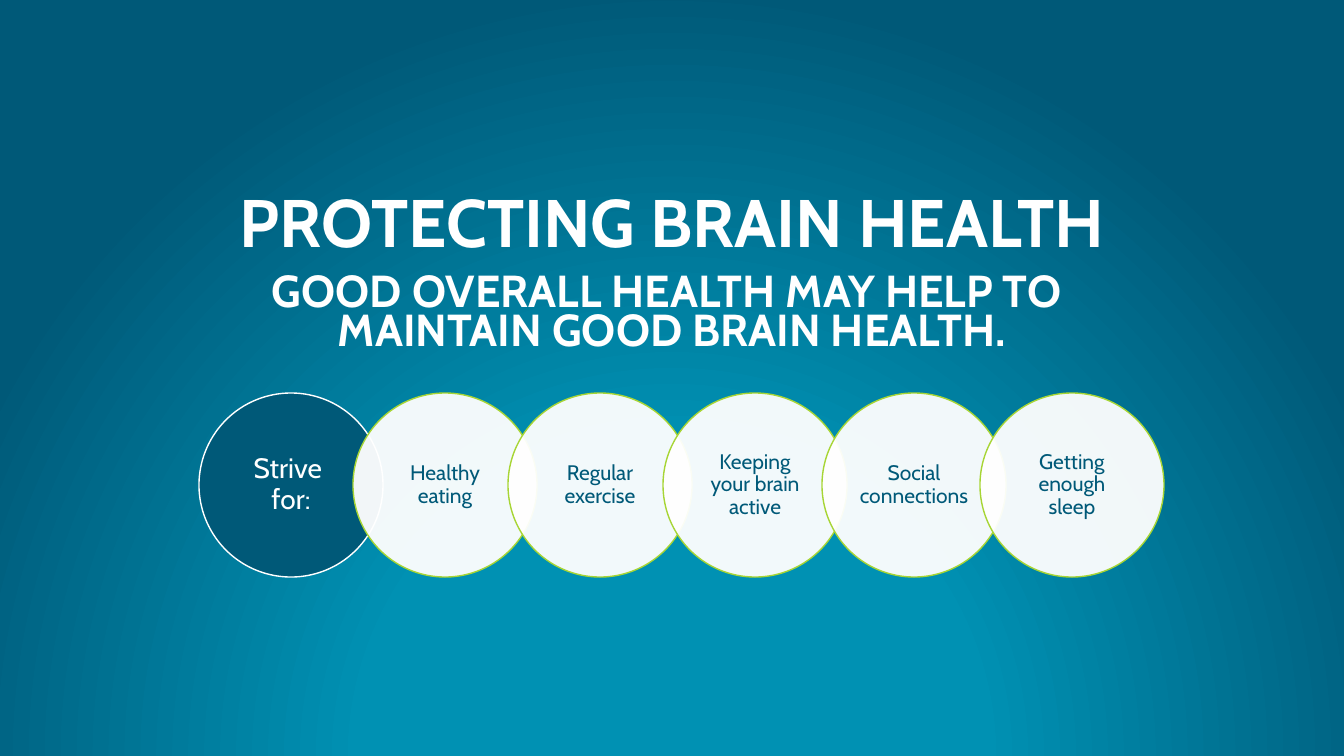
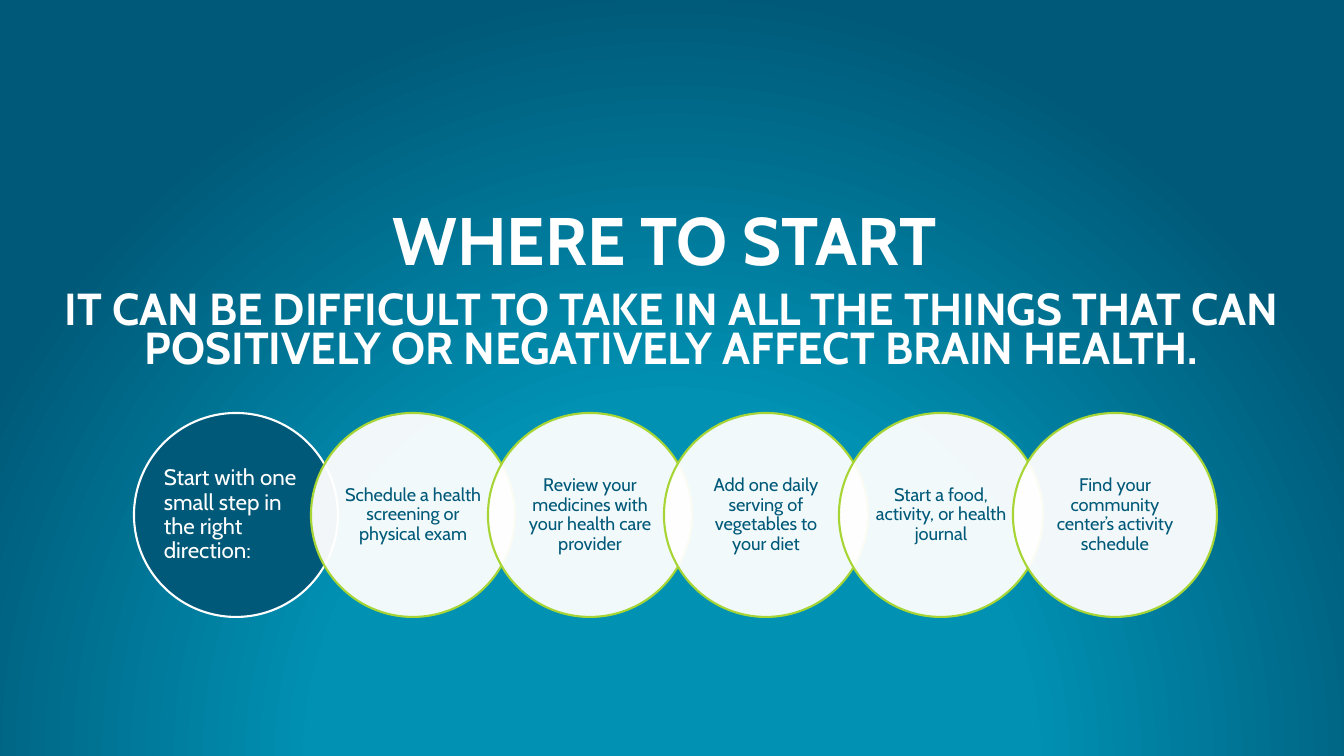
from dataclasses import dataclass

from lxml.etree import SubElement
from pptx import Presentation
from pptx.dml.color import RGBColor
from pptx.enum.shapes import MSO_SHAPE
from pptx.enum.text import MSO_ANCHOR, MSO_AUTO_SIZE, PP_ALIGN
from pptx.oxml import parse_xml
from pptx.oxml.ns import nsdecls, qn
from pptx.slide import Slide
from pptx.text.text import TextFrame
from pptx.util import Emu, Length, Pt

SLIDE_WIDTH, SLIDE_HEIGHT = 1344, 756
EMU_PER_PX = 914400 / 100.8
TITLE_ONLY = 5


@dataclass(frozen=True)
class Theme:
    font: str = "Cabin"
    glow: str = "0091B3"
    deep: str = "005978"
    white: str = "FFFFFF"
    lime: str = "A7D535"
    title_size: int = 48
    subtitle_size: int = 32
    subtitle_leading: float = 27.8
    tight: float = 0.9
    circle_opacity: int = 95


THEME = Theme()


@dataclass(frozen=True)
class TextStyle:
    size: int
    color: str
    bold: bool = False
    spacing: float | Length = THEME.tight
    align: PP_ALIGN = PP_ALIGN.CENTER


TITLE_STYLE = TextStyle(THEME.title_size, THEME.white, True)
SUBTITLE_STYLE = TextStyle(
    THEME.subtitle_size, THEME.white, True, Pt(THEME.subtitle_leading)
)


@dataclass(frozen=True)
class Circle:
    left: int
    text: str


@dataclass(frozen=True)
class CircleRow:
    top: int
    diameter: int
    outline: float
    side_inset: int
    top_inset: int
    lead_style: TextStyle
    step_style: TextStyle
    lead: Circle
    steps: tuple[Circle, ...]


@dataclass(frozen=True)
class Page:
    title: str
    subtitle: str
    title_top: int
    glow_stop: int
    row: CircleRow


PAGES = (
    Page(
        "PROTECTING BRAIN HEALTH",
        "GOOD OVERALL HEALTH MAY HELP TO \nMAINTAIN GOOD BRAIN HEALTH.",
        188,
        40,
        CircleRow(
            393, 184, 1, 10, 2,
            TextStyle(20, THEME.white),
            TextStyle(15, THEME.deep),
            Circle(199, "Strive \nfor:"),
            (
                Circle(353, "Healthy eating"),
                Circle(508, "Regular exercise"),
                Circle(663, "Keeping your brain active"),
                Circle(822, "Social connections"),
                Circle(980, "Getting enough sleep"),
            ),
        ),
    ),
    Page(
        "WHERE TO START ",
        "IT CAN BE DIFFICULT TO TAKE IN ALL THE THINGS THAT CAN "
        "POSITIVELY OR NEGATIVELY AFFECT BRAIN HEALTH.",
        206,
        46,
        CircleRow(
            413, 204, 1.5, 0, 0,
            TextStyle(16, THEME.white, align=PP_ALIGN.LEFT),
            TextStyle(13, THEME.deep),
            Circle(134, "Start with one small step in the right direction:"),
            (
                Circle(311, "Schedule a health screening or physical exam"),
                Circle(488, "Review your medicines with your health care provider"),
                Circle(664, "Add one daily serving of vegetables to\nyour diet"),
                Circle(839, "Start a food, activity, or health journal"),
                Circle(1013, "Find your community center’s activity schedule"),
            ),
        ),
    ),
)


def px(value: int) -> Emu:
    return Emu(round(value * EMU_PER_PX))


def rgb(color: str) -> RGBColor:
    return RGBColor.from_string(color)


def apply(target: object, values: dict[str, object]) -> None:
    for key, value in values.items():
        setattr(target, key, value)


def write(frame: TextFrame, text: str, style: TextStyle, anchor: MSO_ANCHOR) -> None:
    apply(frame, {
        "word_wrap": True,
        "auto_size": MSO_AUTO_SIZE.NONE,
        "vertical_anchor": anchor,
    })
    paragraph = frame.paragraphs[0]
    paragraph.text = text
    apply(paragraph, {"alignment": style.align, "line_spacing": style.spacing})
    for run in paragraph.runs:
        apply(run.font, {
            "name": THEME.font,
            "size": Pt(style.size),
            "bold": style.bold,
        })
        run.font.color.rgb = rgb(style.color)


def paint_background(slide: Slide, glow_stop: int) -> None:
    stops = "".join(
        f'<a:gs pos="{percent * 1000}"><a:srgbClr val="{color}"/></a:gs>'
        for percent, color in ((0, THEME.glow), (glow_stop, THEME.glow), (100, THEME.deep))
    )
    background = parse_xml(
        f'<p:bg {nsdecls("p", "a")}><p:bgPr><a:gradFill rotWithShape="1">'
        f'<a:gsLst>{stops}</a:gsLst><a:path path="circle">'
        '<a:fillToRect l="50000" t="130000" r="50000" b="-30000"/></a:path>'
        '</a:gradFill><a:effectLst/></p:bgPr></p:bg>'
    )
    slide.element.cSld.insert(0, background)


def add_headings(slide: Slide, page: Page) -> None:
    title = slide.shapes.title
    apply(title, {
        "left": px(0),
        "top": px(page.title_top),
        "width": px(SLIDE_WIDTH),
        "height": px(79),
    })
    write(title.text_frame, page.title, TITLE_STYLE, MSO_ANCHOR.BOTTOM)
    subtitle = slide.shapes.add_textbox(
        px(0), px(page.title_top + 85), px(SLIDE_WIDTH), px(86)
    )
    write(subtitle.text_frame, page.subtitle, SUBTITLE_STYLE, MSO_ANCHOR.TOP)


def add_circle(
    slide: Slide,
    row: CircleRow,
    circle: Circle,
    style: TextStyle,
    fill: str,
    outline: str,
    opacity: int = 100,
) -> None:
    disc = slide.shapes.add_shape(
        MSO_SHAPE.OVAL, px(circle.left), px(row.top), px(row.diameter), px(row.diameter)
    )
    disc.shadow.inherit = False
    disc.fill.solid()
    disc.fill.fore_color.rgb = rgb(fill)
    if opacity < 100:
        color = disc.element.spPr.find(qn("a:solidFill"))[0]
        SubElement(color, qn("a:alpha"), val=str(opacity * 1000))
    disc.line.color.rgb = rgb(outline)
    disc.line.width = Pt(row.outline)
    apply(disc.text_frame, {
        "margin_left": px(row.side_inset),
        "margin_right": px(row.side_inset),
        "margin_top": px(row.top_inset),
        "margin_bottom": px(row.top_inset),
    })
    write(disc.text_frame, circle.text, style, MSO_ANCHOR.MIDDLE)


def add_row(slide: Slide, row: CircleRow) -> None:
    add_circle(slide, row, row.lead, row.lead_style, THEME.deep, THEME.white)
    for step in row.steps:
        add_circle(
            slide, row, step, row.step_style,
            THEME.white, THEME.lime, THEME.circle_opacity,
        )


def main() -> None:
    deck = Presentation()
    apply(deck, {"slide_width": px(SLIDE_WIDTH), "slide_height": px(SLIDE_HEIGHT)})
    for page in PAGES:
        slide = deck.slides.add_slide(deck.slide_layouts[TITLE_ONLY])
        paint_background(slide, page.glow_stop)
        add_headings(slide, page)
        add_row(slide, page.row)
    deck.save("out.pptx")


if __name__ == "__main__":
    main()
